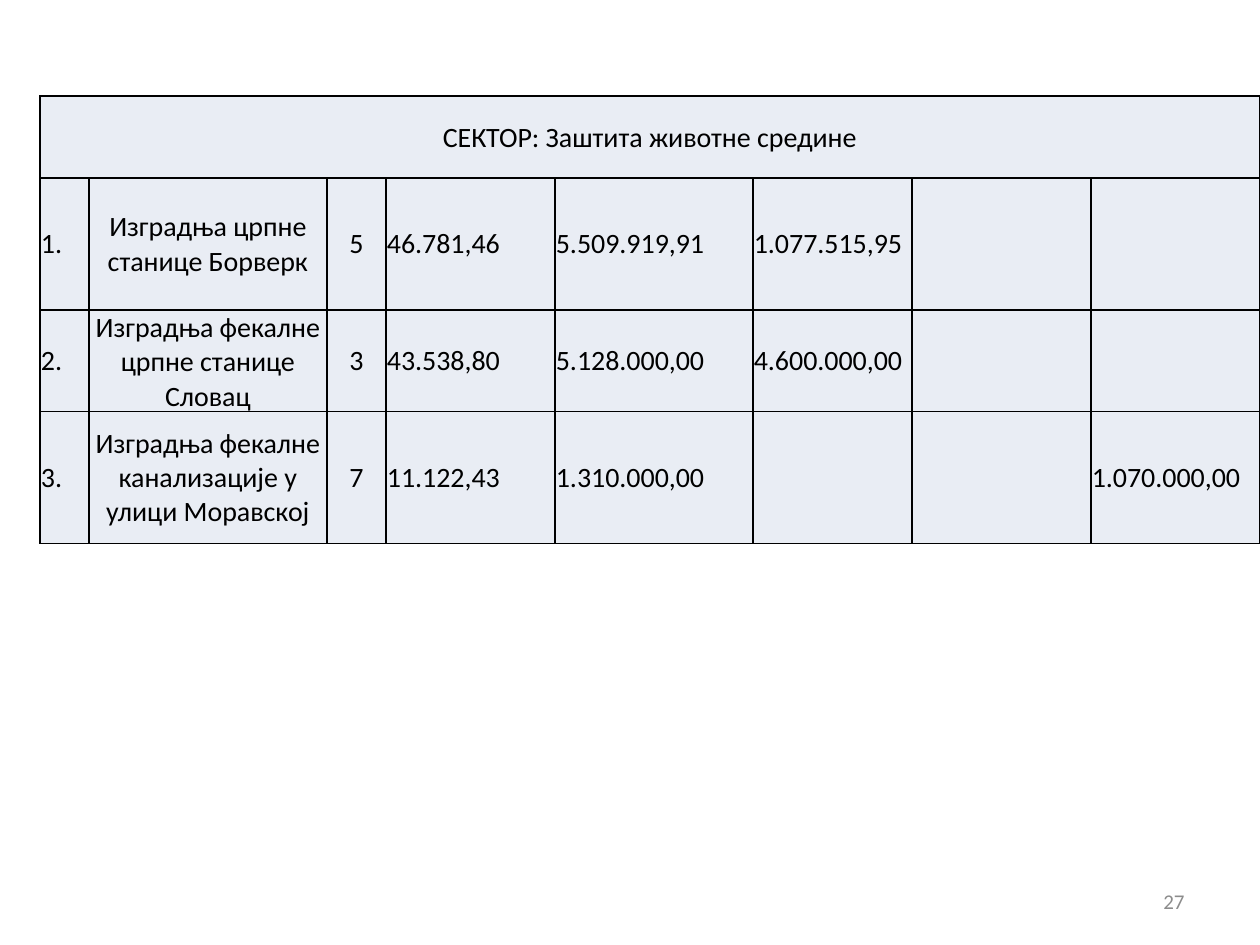
from pptx import Presentation
from pptx.dml.color import RGBColor
from pptx.enum.text import MSO_ANCHOR, PP_ALIGN
from pptx.oxml import parse_xml
from pptx.oxml.ns import nsdecls
from pptx.util import Pt

EMU_PER_PX = 914400 // 126
MIDDLE = MSO_ANCHOR.MIDDLE
ALIGNMENTS = {
    "l": PP_ALIGN.LEFT,
    "c": PP_ALIGN.CENTER,
    "r": PP_ALIGN.RIGHT,
    "j": PP_ALIGN.JUSTIFY,
}
COLORS = {"text": "000000", "number": "8C8C8C", "cell": "E9EDF4", "border": "000000"}
FONT = "Calibri"

COLUMN_WIDTHS = [49, 238, 59, 169, 198, 159, 179, 169]
ROW_HEIGHTS = [82, 132, 100, 132]
SECTOR = "СЕКТОР: Заштита животне средине"
PROJECTS = [
    ["1.", "Изградња црпне станице Борверк", "5",
     "46.781,46", "5.509.919,91", "1.077.515,95", "", ""],
    ["2.", "Изградња фекалне црпне станице Словац", "3",
     "43.538,80", "5.128.000,00", "4.600.000,00", "", ""],
    ["3.", "Изградња фекалне канализације у улици Моравској", "7",
     "11.122,43", "1.310.000,00", "", "", "1.070.000,00"],
]
PROJECT_ALIGNMENTS = ["jcclllll", "lcclllll", "jccjjjjj"]


def px(length):
    return length * EMU_PER_PX


def write_text(frame, text, alignment, size, color):
    frame.text = text
    para = frame.paragraphs[0]
    para.alignment = ALIGNMENTS[alignment]
    for font in [para.font] + [span.font for span in para.runs]:
        font.name = FONT
        font.size = Pt(size)
        font.color.rgb = RGBColor.from_string(COLORS[color])


def add_borders(cell):
    properties = cell._tc.get_or_add_tcPr()
    for index, side in enumerate(("lnL", "lnR", "lnT", "lnB")):
        border = parse_xml(
            f'<a:{side} {nsdecls("a")} w="{Pt(1)}"><a:solidFill>'
            f'<a:srgbClr val="{COLORS["border"]}"/></a:solidFill></a:{side}>'
        )
        properties.insert(index, border)


def format_cell(cell):
    cell.fill.solid()
    cell.fill.fore_color.rgb = RGBColor.from_string(COLORS["cell"])
    cell.vertical_anchor = MIDDLE
    cell.margin_left = cell.margin_right = cell.margin_top = px(1)
    cell.margin_bottom = 0
    add_borders(cell)


def add_project_table(page):
    frame = page.shapes.add_table(
        len(ROW_HEIGHTS), len(COLUMN_WIDTHS), px(40), px(96),
        px(sum(COLUMN_WIDTHS)), px(sum(ROW_HEIGHTS)),
    )
    table = frame.table
    for column, width in zip(table.columns, COLUMN_WIDTHS):
        column.width = px(width)
    for row, height in zip(table.rows, ROW_HEIGHTS):
        row.height = px(height)
    for cell in table.iter_cells():
        format_cell(cell)
    table.cell(0, 0).merge(table.cell(0, len(COLUMN_WIDTHS) - 1))
    write_text(table.cell(0, 0).text_frame, SECTOR, "c", 16, "text")
    for row, (project, alignments) in enumerate(zip(PROJECTS, PROJECT_ALIGNMENTS), 1):
        for column, (text, alignment) in enumerate(zip(project, alignments)):
            write_text(table.cell(row, column).text_frame, text, alignment, 16, "text")


def add_page_number(page, number):
    box = page.shapes.add_textbox(px(903), px(876), px(294), px(50))
    frame = box.text_frame
    frame.word_wrap = True
    frame.vertical_anchor = MIDDLE
    write_text(frame, number, "r", 12, "number")


def main():
    deck = Presentation()
    deck.slide_width = px(1260)
    deck.slide_height = px(945)
    page = deck.slides.add_slide(deck.slide_layouts[6])
    add_page_number(page, "27")
    add_project_table(page)
    deck.save("out.pptx")


if __name__ == "__main__":
    main()
